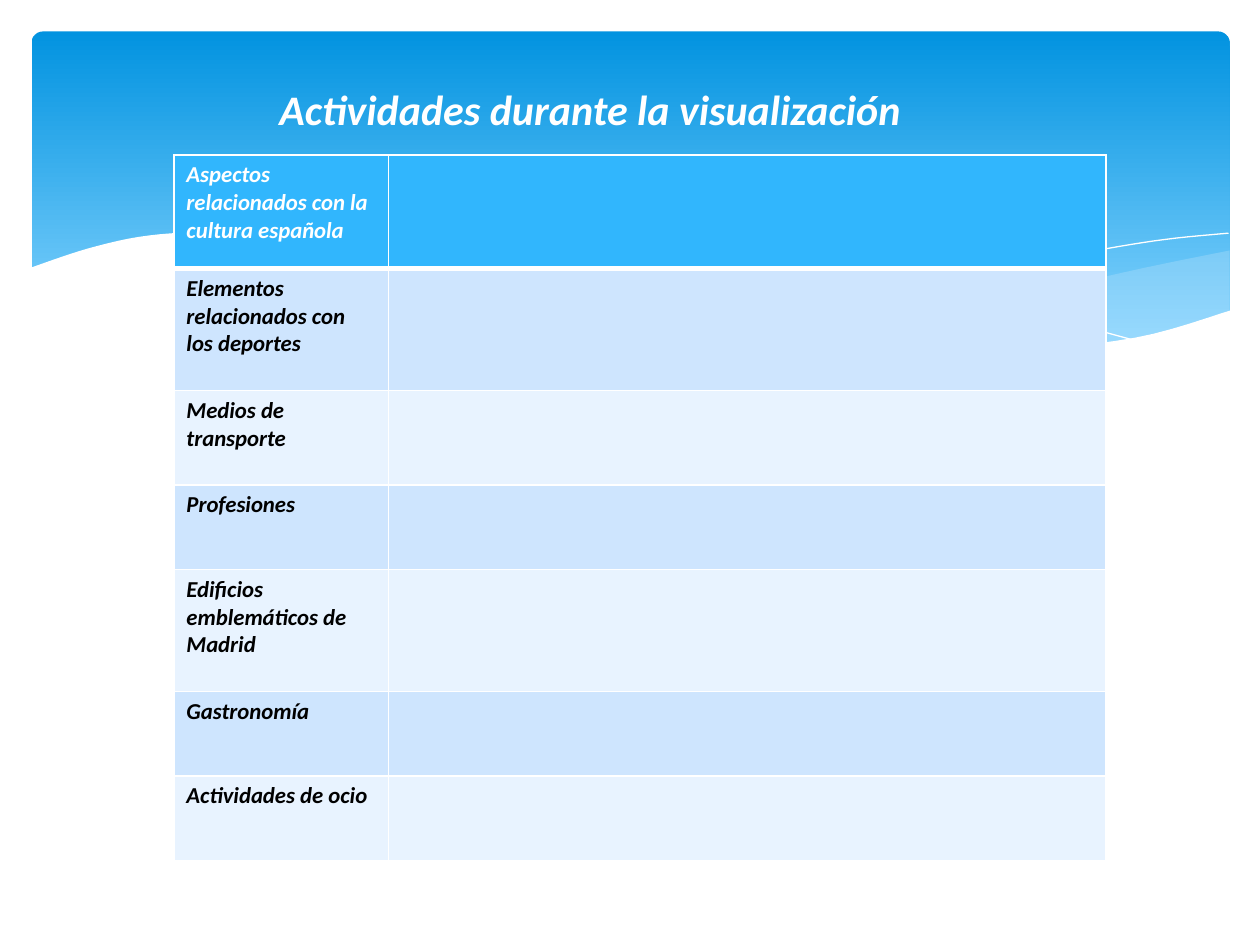
from itertools import chain

from lxml.etree import SubElement
from pptx import Presentation
from pptx.dml.color import RGBColor as Rgb
from pptx.enum.shapes import MSO_SHAPE as Preset
from pptx.oxml.ns import qn
from pptx.util import Inches, Pt

COLORS = {
    "sky_top": "0293E0", "sky_bottom": "83D3FE", "veil": "C6E7FC",
    "white": "FFFFFF", "ink": "000000",
    "header": "31B6FD", "band_dark": "CEE5FE", "band_light": "E8F3FF",
}
FONT = "Calibri"
WIDTH, HEIGHT = Inches(10), Inches(7.5)

TITLE = "Actividades durante la visualización"
TOPICS = [
    ("Aspectos relacionados con la cultura española", 0.90),
    ("Elementos relacionados con los deportes", 0.97),
    ("Medios de transporte", 0.75),
    ("Profesiones", 0.67),
    ("Edificios emblemáticos de Madrid", 0.97),
    ("Gastronomía", 0.67),
    ("Actividades de ocio", 0.67),
]
COLUMN_SHARES = (0.23, 0.77)

RIGHT_VEIL = [
    [(100, 0), (78, 18), (54, 40), (29, 63), (0, 85)],
    [(0, 85), (18, 94), (34, 99), (55, 100), (75, 91), (89, 77), (100, 62)],
]
MIDDLE_VEIL = [
    [(100, 95), (86, 80), (69, 58), (54, 34), (40, 15), (26, 3), (12, 0), (0, 5)],
    [(0, 5), (13, 18), (27, 39), (46, 67), (65, 88), (80, 98), (91, 99), (100, 95)],
]
LONG_CREST = [[(0, 9), (9, 2), (18, 0), (30, 4), (46, 15), (65, 38), (81, 64), (100, 100)]]
SHORT_CREST = [[(0, 100), (23, 70), (45, 44), (70, 20), (86, 7), (100, 0)]]
WHITE_WAVE = [
    [(100, 43), (92, 58), (82, 64), (70, 58), (58, 46), (44, 25), (33, 9),
     (24, 1), (16, 0), (10, 2), (5, 9), (0, 20)],
    [(0, 100), (100, 100)],
]


def color(name):
    """Return the named palette colour."""
    return Rgb.from_string(COLORS[name])


def share(left, top, width, height):
    """Turn percentages of the slide into a box of lengths."""
    return tuple(int(part * side / 100) for part, side in
                 zip((left, top, width, height), (WIDTH, HEIGHT) * 2))


def smooth(knots, steps=6):
    """Sample a Catmull-Rom curve through the knots."""
    if len(knots) < 3:
        return knots
    padded = [knots[0], *knots, knots[-1]]
    curve = [knots[0]]
    for before, start, end, after in zip(padded, padded[1:], padded[2:], padded[3:]):
        for step in range(1, steps + 1):
            t = step / steps
            curve.append(tuple(
                (2 * b + (c - a) * t + (2 * a - 5 * b + 4 * c - d) * t ** 2
                 + (3 * b - a - 3 * c + d) * t ** 3) / 2
                for a, b, c, d in zip(before, start, end, after)))
    return curve


def add_wave(slide, box, curves, fill=None, opacity=100):
    """Draw a filled wave, or a white crest line when no fill is given."""
    left, top, width, height = box
    points = [(left + x * width / 100, top + y * height / 100)
              for x, y in chain.from_iterable(map(smooth, curves))]
    outline = slide.shapes.build_freeform(*points[0])
    outline.add_line_segments(points[1:], close=fill is not None)
    wave = outline.convert_to_shape()
    wave.shadow.inherit = False
    if fill is None:
        wave.fill.background()
        wave.line.color.rgb = color("white")
        wave.line.width = Pt(0)
        return
    wave.line.fill.background()
    wave.fill.solid()
    wave.fill.fore_color.rgb = color(fill)
    if opacity < 100:
        tint = wave._element.spPr.find(qn("a:solidFill"))[0]
        SubElement(tint, qn("a:alpha"), val=str(opacity * 1000))


def add_sky(slide, box):
    """Draw the rounded gradient panel."""
    sky = slide.shapes.add_shape(Preset.ROUNDED_RECTANGLE, *box)
    sky.adjustments[0] = 0.034
    sky.shadow.inherit = False
    sky.line.fill.background()
    sky.fill.gradient()
    sky.fill.gradient_angle = 270
    for stop, name, position in zip(sky.fill.gradient_stops, ("sky_top", "sky_bottom"), (0, 0.9)):
        stop.color.rgb = color(name)
        stop.position = position


def add_backdrop(slide):
    """Layer the sky panel and its waves."""
    add_sky(slide, share(2.5, 3.33, 95.1, 36))
    add_wave(slide, share(66.1, 26.5, 31.5, 10.5), RIGHT_VEIL, "veil", 29)
    add_wave(slide, share(28.6, 24.8, 60.7, 12.4), MIDDLE_VEIL, "veil", 40)
    add_wave(slide, share(30.9, 24.93, 59.8, 11.33), LONG_CREST)
    add_wave(slide, share(61.3, 24.67, 36.2, 9.6), SHORT_CREST)
    add_wave(slide, share(2.3, 24.53, 95.4, 19.33), WHITE_WAVE, "white")


def write(paragraph, text, size, name):
    """Add a bold italic run to the paragraph."""
    run = paragraph.add_run()
    run.text = text
    font = run.font
    font.name, font.size, font.bold, font.italic = FONT, Pt(size), True, True
    font.color.rgb = color(name)


def add_title(slide, box):
    """Place the slide heading."""
    frame = slide.shapes.add_textbox(*box).text_frame
    frame.word_wrap = True
    write(frame.paragraphs[0], TITLE, 24, "white")


def add_borders(cell, bottom):
    """Give the cell white edges, with its own bottom width."""
    properties = cell._tc.get_or_add_tcPr()
    for index, (edge, width) in enumerate(zip(("lnL", "lnR", "lnT", "lnB"), (1, 1, 1, bottom))):
        line = properties.makeelement(qn(f"a:{edge}"), {"w": str(Pt(width))})
        paint = SubElement(line, qn("a:solidFill"))
        SubElement(paint, qn("a:srgbClr"), val=COLORS["white"])
        properties.insert(index, line)


def add_topics(slide, box):
    """Build the table of topics with an empty answer column."""
    width, height = box[2:]
    total = sum(weight for _, weight in TOPICS)
    table = slide.shapes.add_table(len(TOPICS), len(COLUMN_SHARES), *box).table
    for column, part in zip(table.columns, COLUMN_SHARES):
        column.width = int(width * part)
    for index, (row, (topic, weight)) in enumerate(zip(table.rows, TOPICS)):
        row.height = int(height * weight / total)
        header = index == 0
        band = "header" if header else ("band_light", "band_dark")[index % 2]
        for cell in row.cells:
            cell.fill.solid()
            cell.fill.fore_color.rgb = color(band)
            add_borders(cell, 3 if header else 1)
        write(row.cells[0].text_frame.paragraphs[0], topic, 13, "white" if header else "ink")


def main():
    """Build and save the slide."""
    deck = Presentation()
    deck.slide_width, deck.slide_height = WIDTH, HEIGHT
    slide = deck.slides.add_slide(deck.slide_layouts[6])
    add_backdrop(slide)
    add_title(slide, share(21.2, 8.2, 60, 6.5))
    add_topics(slide, share(13.8, 16.4, 74, 74.67))
    deck.save("out.pptx")


if __name__ == "__main__":
    main()
